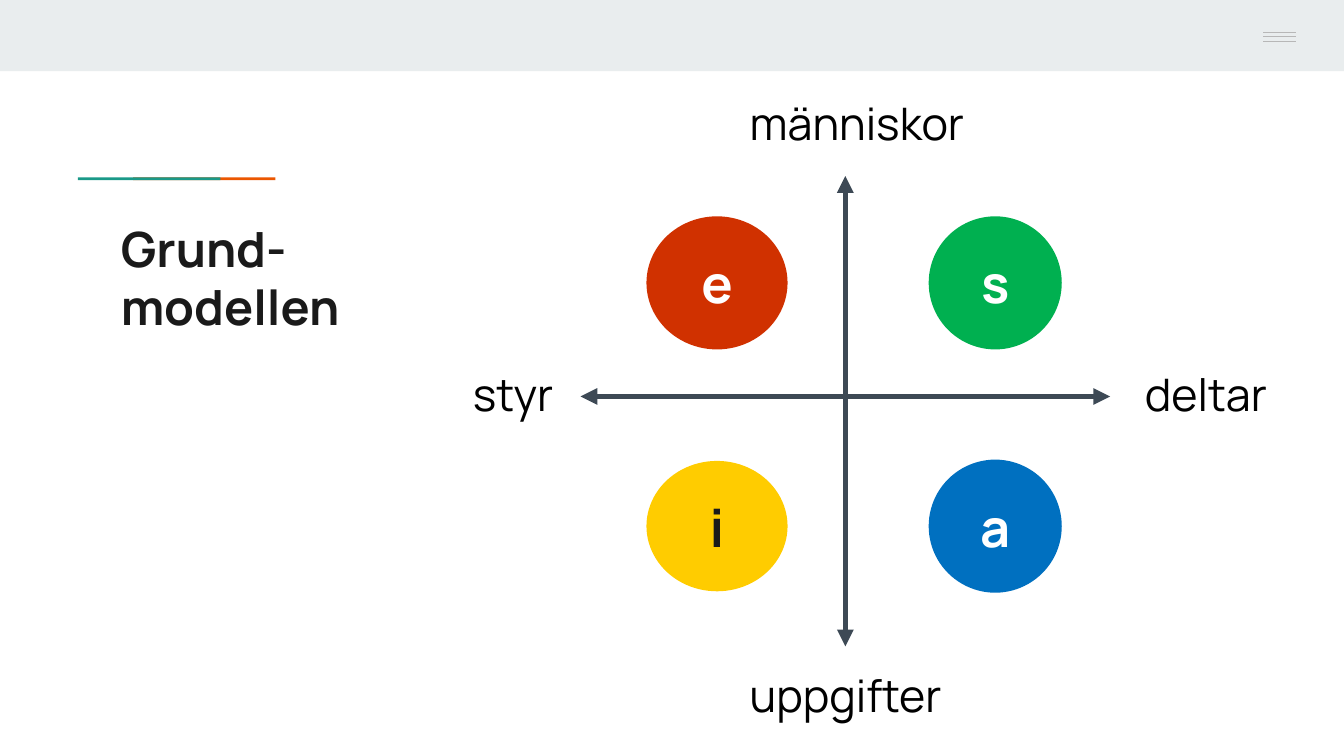
"""Builds the slide Grundmodellen, a four-field model with two axes."""
from lxml import etree
from pptx import Presentation
from pptx.dml.color import RGBColor
from pptx.enum.shapes import MSO_CONNECTOR as Connector, MSO_SHAPE as Shape
from pptx.enum.text import MSO_ANCHOR as Anchor, MSO_AUTO_SIZE as AutoSize, PP_ALIGN as Align
from pptx.oxml.ns import qn
from pptx.util import Pt

SCALE = 9144
FONT = "Manrope"
PALE, INK, WHITE = "E9EDEE", "1A1A1A", "FFFFFF"


def px(length):
    """Turns px, 100 to the inch, into EMU."""
    return length * SCALE


def color(hex_code):
    """Returns the colour for a hex string."""
    return RGBColor.from_string(hex_code)


def add_span(para, text, size, hex_code, bold=False):
    """Adds one formatted run."""
    span = para.add_run()
    span.text = text
    span.font.name = FONT
    span.font.size = Pt(size)
    span.font.bold = bold
    span.font.color.rgb = color(hex_code)


def set_frame(frame, anchor):
    """Sets the anchor and equal margins of a text frame."""
    frame.word_wrap = True
    frame.vertical_anchor = anchor
    frame.margin_left = frame.margin_right = frame.margin_top = frame.margin_bottom = px(10)


def add_filled(page, kind, left, top, width, height, hex_code):
    """Adds a flat shape without outline."""
    shape = page.shapes.add_shape(kind, px(left), px(top), px(width), px(height))
    shape.shadow.inherit = False
    shape.fill.solid()
    shape.fill.fore_color.rgb = color(hex_code)
    shape.line.fill.background()
    return shape


def add_line(page, start, end, hex_code, weight, arrows=False):
    """Adds a straight line, with arrowheads at both ends on request."""
    line = page.shapes.add_connector(Connector.STRAIGHT, *map(px, start + end))
    line.line.color.rgb = color(hex_code)
    line.line.width = Pt(weight)
    if arrows:
        outline = line.line._get_or_add_ln()
        for tag in ("a:headEnd", "a:tailEnd"):
            etree.SubElement(outline, qn(tag), type="triangle")
    etree.SubElement(line._element.spPr, qn("a:effectLst"))


def add_header(page, left, top, width, height):
    """Draws the top band with its menu icon."""
    add_filled(page, Shape.RECTANGLE, left, top, width, height, PALE)
    icon_left = left + width - 60
    for offset in (24, 27, 31):
        add_line(page, (icon_left, top + offset), (icon_left + 24, top + offset), "B7B7B7", 0.75)


def add_heading(page, left, top, width, height):
    """Places the two-tone rule and the title below it."""
    for offset, hex_code in ((41, "EB5600"), (0, "1A9988")):
        add_filled(page, Shape.RECTANGLE, left + offset, top, 106, 2, hex_code)
    title = page.shapes.title
    title.left, title.top, title.width, title.height = map(px, (left + 22, top + 21, width, height))
    title.text_frame.auto_size = AutoSize.NONE
    set_frame(title.text_frame, Anchor.TOP)
    para = title.text_frame.paragraphs[0]
    para.alignment = Align.LEFT
    add_span(para, "Grund-", 26, INK, True)
    para.add_line_break()
    add_span(para, "modellen", 26, INK, True)


def add_field(page, left, top, width, height, letter, fill, ink):
    """Draws one lettered circle."""
    circle = add_filled(page, Shape.OVAL, left, top, width, height, fill)
    set_frame(circle.text_frame, Anchor.MIDDLE)
    para = circle.text_frame.paragraphs[0]
    para.alignment = Align.CENTER
    add_span(para, letter, 28, ink, True)


def add_label(page, left, top, width, text):
    """Places the name of one axis end."""
    box = page.shapes.add_textbox(px(left), px(top), px(width), px(50))
    box.text_frame.word_wrap = True
    add_span(box.text_frame.paragraphs[0], text, 24, "000000")


def add_model(page, left, top, width, height):
    """Draws the axes, the four fields and the axis labels."""
    middle, center = left + width // 2, top + 164
    add_line(page, (middle, top), (middle, top + height), "3D4955", 3, True)
    add_line(page, (left, center), (left + width, center), "3D4955", 3, True)
    fields = (
        (49, 30, 105, 99, "e", "D03100", WHITE),
        (49, 212, 105, 97, "i", "FFCC00", INK),
        (259, 30, 99, 99, "s", "00B050", WHITE),
        (259, 211, 99, 99, "a", "0070C0", WHITE),
    )
    for x, y, *rest in fields:
        add_field(page, left + x, top + y, *rest)
    labels = (
        (116, -65, 242, "människor"),
        (116, 361, 175, "uppgifter"),
        (-90, 137, 168, "styr"),
        (410, 137, 158, "deltar"),
    )
    for x, y, *rest in labels:
        add_label(page, left + x, top + y, *rest)


def main():
    """Builds and saves the deck."""
    deck = Presentation()
    deck.slide_width = px(1000)
    deck.slide_height = deck.slide_width * 9 // 16
    page = deck.slides.add_slide(deck.slide_layouts[5])
    add_header(page, 0, 0, 1000, 53)
    add_model(page, 432, 131, 394, 350)
    add_heading(page, 58, 132, 841, 59)
    deck.save("out.pptx")


if __name__ == "__main__":
    main()
